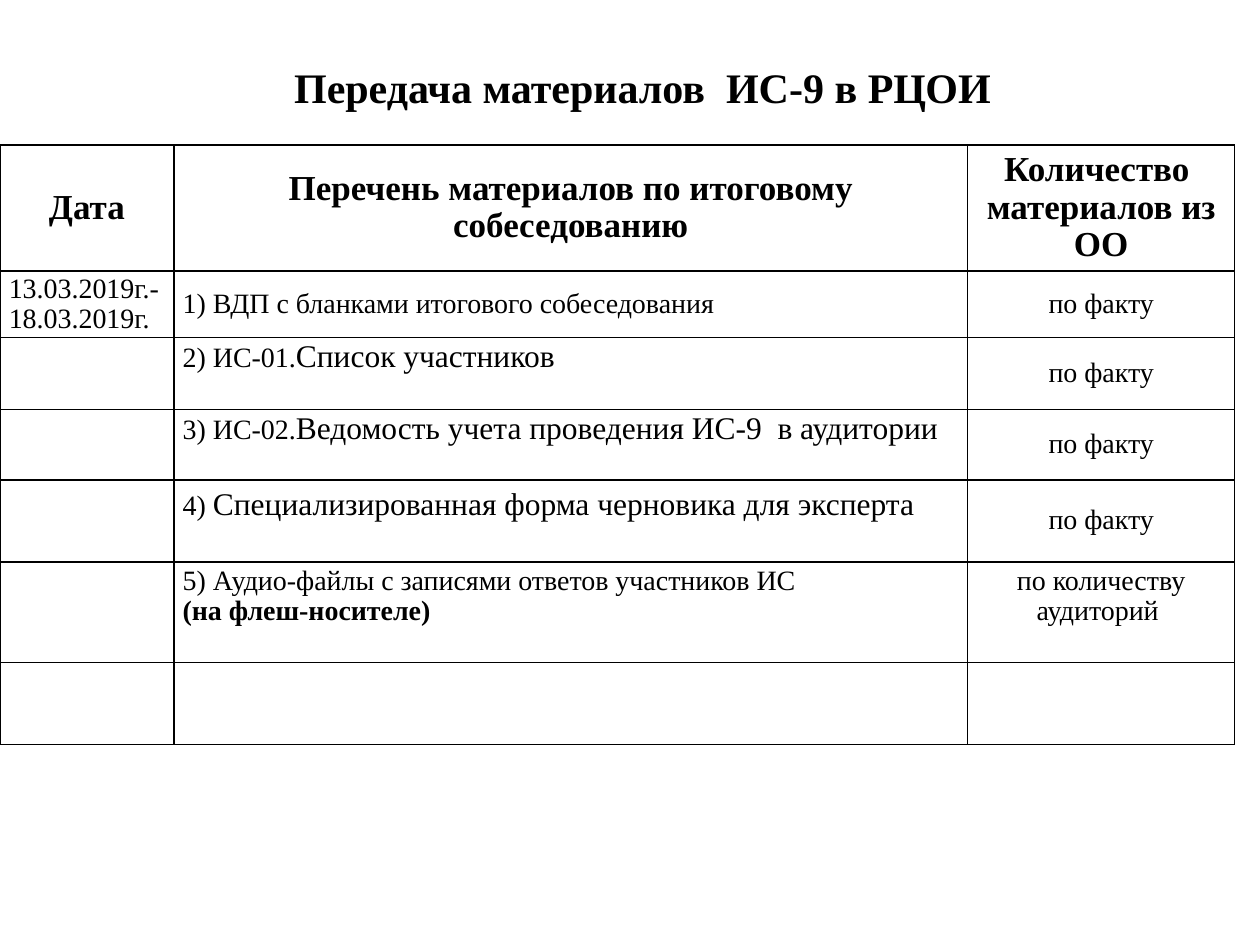
from lxml import etree
from pptx import Presentation
from pptx.dml.color import RGBColor
from pptx.enum.text import MSO_ANCHOR, MSO_AUTO_SIZE, PP_ALIGN
from pptx.oxml.ns import qn
from pptx.util import Inches, Pt

BLACK = RGBColor(0x00, 0x00, 0x00)
WHITE = RGBColor(0xFF, 0xFF, 0xFF)
FONT = "Times New Roman"
TOP, MIDDLE = MSO_ANCHOR.TOP, MSO_ANCHOR.MIDDLE
LEFT, CENTER, JUSTIFY = PP_ALIGN.LEFT, PP_ALIGN.CENTER, PP_ALIGN.JUSTIFY
NO_FIT = MSO_AUTO_SIZE.NONE

TITLE = "Передача материалов  ИС-9 в РЦОИ"
HEADINGS = [
    "Дата",
    "Перечень материалов по итоговому собеседованию",
    "Количество  материалов из ОО",
]
BY_FACT = "по факту"
# Each material is a list of paragraphs, each paragraph a list of (text, size, bold).
MATERIALS = [
    ("13.03.2019г.-18.03.2019г.",
     [[("1) ВДП с бланками итогового собеседования", 16, False)]], BY_FACT),
    ("", [[("2) ИС-01.", 16, False), ("Список участников", 18, False)]], BY_FACT),
    ("", [[("3) ИС-02.", 16, False),
           ("Ведомость учета проведения ИС-9  в аудитории", 18, False)]], BY_FACT),
    ("", [[("4) ", 16, False),
           ("Специализированная форма черновика для эксперта", 18, False)]], BY_FACT),
    ("", [[("5) Аудио-файлы с записями ответов участников ИС", 16, False)],
          [("(на флеш-носителе)", 16, True)]], "по количеству аудиторий "),
    ("", [], ""),
]
COLUMN_WIDTHS = [1.38, 6.3, 2.12]
ROW_HEIGHTS = [1, 0.53, 0.57, 0.56, 0.65, 0.8, 0.65]
BLANK_LINE = 0.25


def set_values(target, values):
    for name, value in values.items():
        setattr(target, name, value)


def write_paragraphs(frame, paragraphs, align, line_spacing):
    for index, runs in enumerate(paragraphs):
        paragraph = frame.add_paragraph() if index else frame.paragraphs[0]
        set_values(paragraph, {"alignment": align, "line_spacing": line_spacing})
        for text, size, bold in runs:
            run = paragraph.add_run()
            run.text = text
            set_values(run.font, {"name": FONT, "size": Pt(size), "bold": bold})
            run.font.color.rgb = BLACK


def draw_borders(cell):
    properties = cell._tc.get_or_add_tcPr()
    for position, side in enumerate(("lnL", "lnR", "lnT", "lnB")):
        border = etree.Element(qn(f"a:{side}"), w=str(Pt(1)))
        fill = etree.SubElement(border, qn("a:solidFill"))
        etree.SubElement(fill, qn("a:srgbClr"), val=str(BLACK))
        properties.insert(position, border)


def fill_cell(cell, paragraphs, align, side_margin, bottom_margin=0):
    set_values(cell, {
        "margin_left": Inches(side_margin), "margin_right": Inches(side_margin),
        "margin_top": 0, "margin_bottom": Inches(bottom_margin),
        "vertical_anchor": MIDDLE,
    })
    cell.fill.solid()
    cell.fill.fore_color.rgb = WHITE
    draw_borders(cell)
    write_paragraphs(cell.text_frame, paragraphs, align, 0.96)


def place_title(slide, left, top, width, height):
    title = slide.shapes.title
    set_values(title, {"left": left, "top": top, "width": width, "height": height})
    set_values(title.text_frame, {
        "word_wrap": True, "auto_size": NO_FIT, "vertical_anchor": TOP,
    })
    write_paragraphs(title.text_frame, [[(TITLE, 24, True)]], CENTER, 1)


def place_materials(slide, left, top, width, height):
    table = slide.shapes.add_table(
        len(ROW_HEIGHTS), len(COLUMN_WIDTHS), left, top, width, height).table
    set_values(table, {"first_row": False, "horz_banding": False})
    for column, column_width in zip(table.columns, COLUMN_WIDTHS):
        column.width = Inches(column_width)
    for row, row_height in zip(table.rows, ROW_HEIGHTS):
        row.height = Inches(row_height)

    for column, heading in enumerate(HEADINGS):
        fill_cell(table.cell(0, column), [[(heading, 20, True)]], CENTER, 0.05)

    for row, (date, material, amount) in enumerate(MATERIALS, start=1):
        material_gap = 0 if date else BLANK_LINE
        amount_gap = 0 if amount == BY_FACT else BLANK_LINE
        fill_cell(table.cell(row, 0), [[(date, 16, False)]] if date else [],
                  JUSTIFY, 0.07)
        fill_cell(table.cell(row, 1), material, LEFT, 0.07, material_gap)
        fill_cell(table.cell(row, 2), [[(amount, 16, False)]] if amount else [],
                  CENTER, 0.07, amount_gap)


def main():
    deck = Presentation()
    set_values(deck, {"slide_width": Inches(10), "slide_height": Inches(7.5)})
    slide = deck.slides.add_slide(deck.slide_layouts[5])
    place_title(slide, Inches(0.2), Inches(0.44), Inches(9.8), Inches(0.93))
    place_materials(slide, Inches(0), Inches(1.15),
                    Inches(sum(COLUMN_WIDTHS)), Inches(sum(ROW_HEIGHTS)))
    deck.save("out.pptx")


if __name__ == "__main__":
    main()
